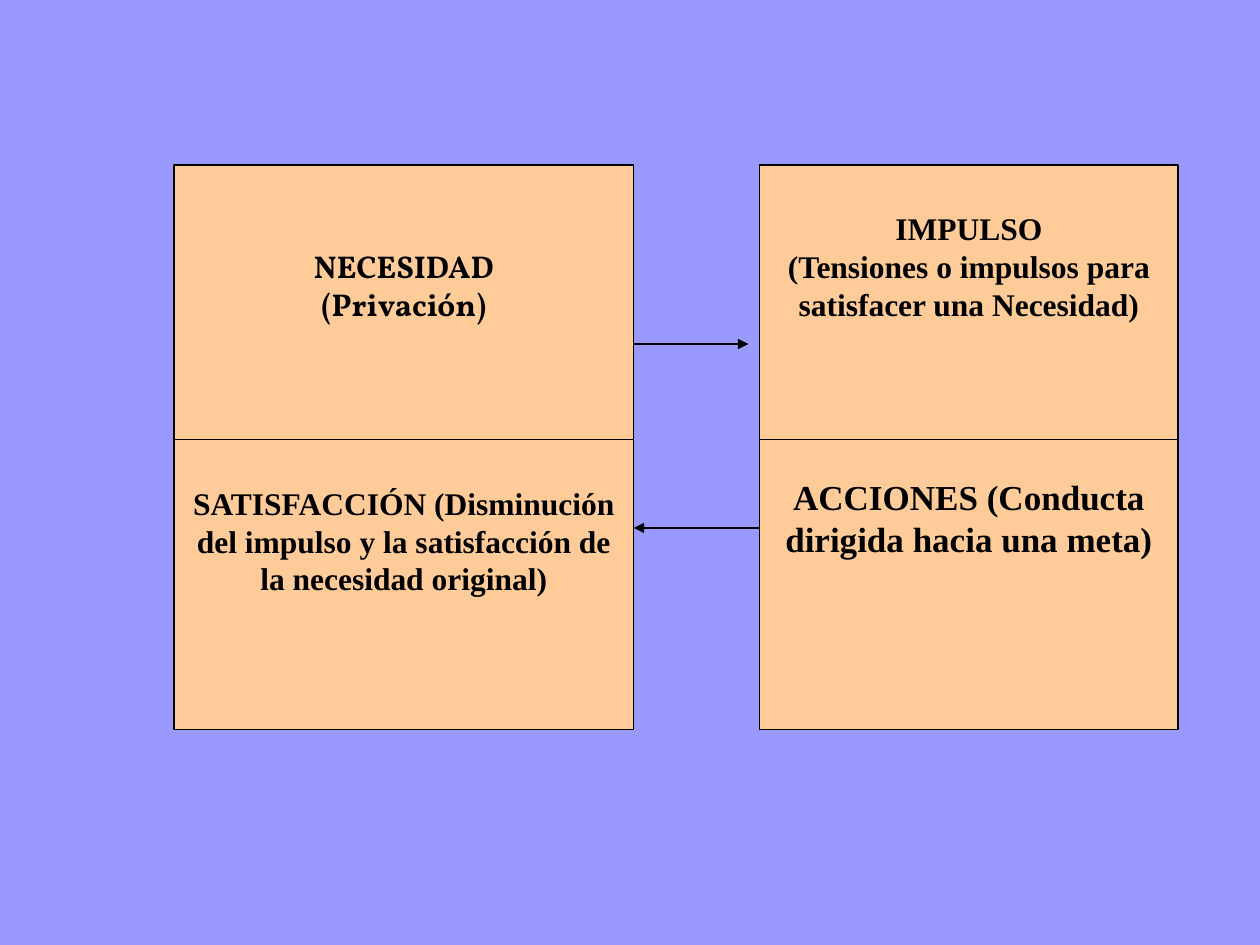
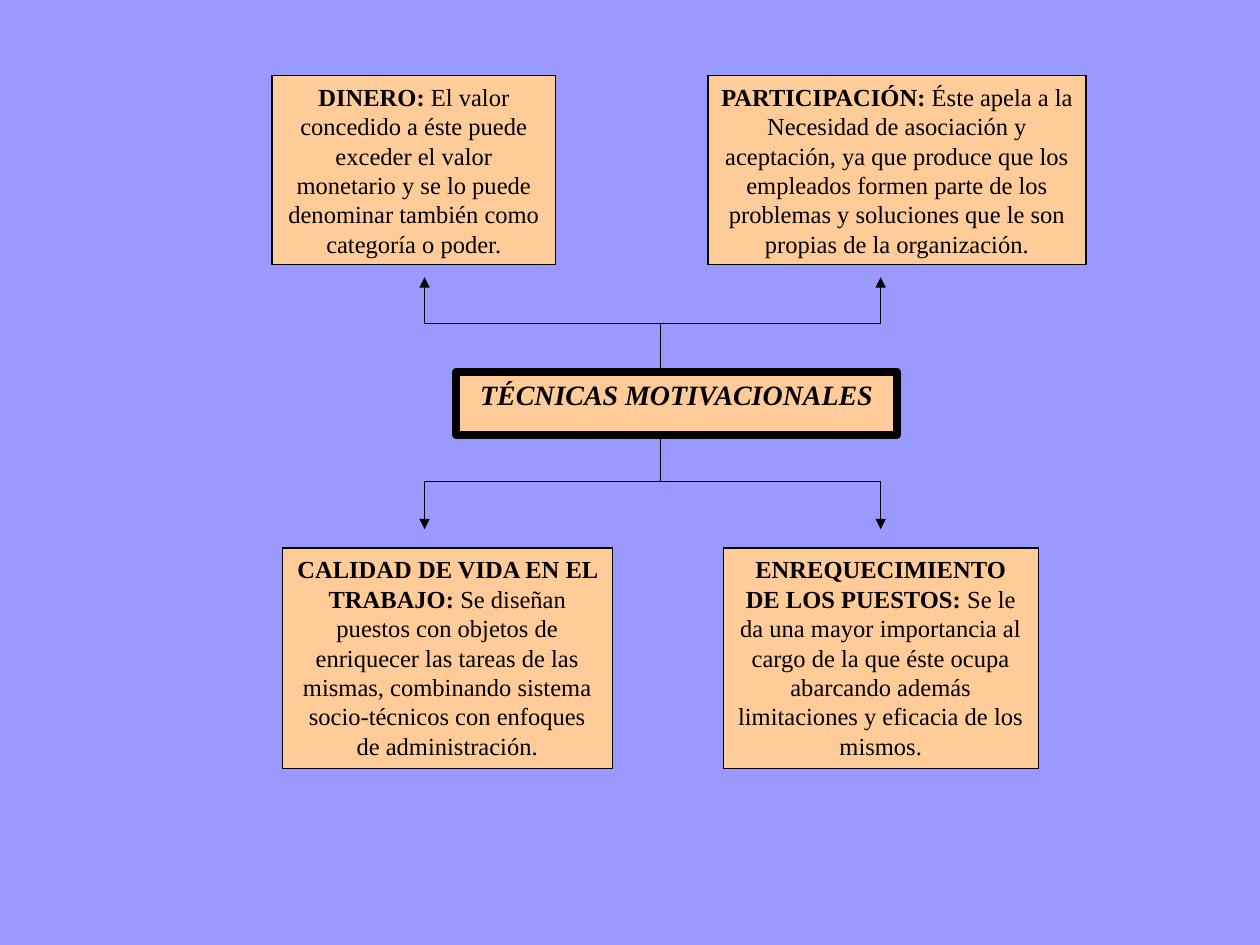
from dataclasses import dataclass

from lxml import etree
from pptx import Presentation
from pptx.dml.color import RGBColor
from pptx.enum import shapes, text
from pptx.oxml import ns
from pptx.slide import Slide
from pptx.util import Inches, Pt


@dataclass(frozen=True)
class Theme:
    background: RGBColor = RGBColor(0x99, 0x99, 0xFF)
    panel: RGBColor = RGBColor(0xFF, 0xCC, 0x99)
    ink: RGBColor = RGBColor(0, 0, 0)
    font: str = "Times New Roman"
    accent_font: str = "Vollkorn"
    small: float = 14
    heading: float = 16
    medium: float = 18
    large: float = 20
    thin: float = 0.75
    thick: float = 4.5


THEME = Theme()


@dataclass(frozen=True)
class Panel:
    """A filled box: bold lead (one paragraph per line), then a plain body."""
    left: float
    top: float
    width: float
    height: float
    lead: str
    body: str = ""
    size: float = THEME.small
    font: str = THEME.font
    italic: bool = False
    border: float = THEME.thin
    inset_top: float = 0.05


@dataclass(frozen=True)
class Line:
    start: tuple[float, float]
    end: tuple[float, float]
    arrow: bool = False


def add_span(para, wording: str, panel: Panel, bold: bool) -> None:
    span = para.add_run()
    span.text = wording
    formats = {"name": panel.font, "size": Pt(panel.size),
               "bold": bold, "italic": panel.italic}
    for name, value in formats.items():
        setattr(span.font, name, value)
    span.font.color.rgb = THEME.ink


def draw_panel(page: Slide, panel: Panel) -> None:
    box = page.shapes.add_shape(
        shapes.MSO_SHAPE.RECTANGLE, Inches(panel.left), Inches(panel.top),
        Inches(panel.width), Inches(panel.height))
    box.shadow.inherit = False
    box.fill.solid()
    box.fill.fore_color.rgb = THEME.panel
    box.line.color.rgb = THEME.ink
    box.line.width = Pt(panel.border)
    frame = box.text_frame
    formats = {"word_wrap": True, "vertical_anchor": text.MSO_ANCHOR.TOP,
               "margin_top": Inches(panel.inset_top)}
    for name, value in formats.items():
        setattr(frame, name, value)
    for index, wording in enumerate(panel.lead.split("\n")):
        para = frame.add_paragraph() if index else frame.paragraphs[0]
        para.alignment = text.PP_ALIGN.CENTER
        add_span(para, wording, panel, bold=True)
    if panel.body:
        add_span(para, " " + panel.body, panel, bold=False)


def draw_line(page: Slide, line: Line) -> None:
    points = [Inches(value) for value in (*line.start, *line.end)]
    connector = page.shapes.add_connector(shapes.MSO_CONNECTOR.STRAIGHT, *points)
    connector.line.color.rgb = THEME.ink
    connector.line.width = Pt(THEME.thin)
    if line.arrow:
        outline = connector.line._get_or_add_ln()
        etree.SubElement(outline, ns.qn("a:tailEnd"), type="triangle")
    etree.SubElement(connector._element.spPr, ns.qn("a:effectLst"))


def branch(trunk: float, arms: tuple[float, float],
           base: float, fork: float, tip: float) -> list[Line]:
    """A trunk from base to fork, a crossbar, and an arrow to tip on each arm."""
    left, right = arms
    return [Line((trunk, base), (trunk, fork)),
            Line((left, fork), (right, fork)),
            *(Line((arm, fork), (arm, tip), arrow=True) for arm in arms)]


def build_cycle(page: Slide) -> None:
    upper, lower, height = 1.31, 3.49, 2.3
    left, left_width = 1.38, 3.65
    right, right_width = 6.03, 3.32
    panels = [
        Panel(left, upper, left_width, height, "NECESIDAD\n(Privación)",
              size=THEME.medium, font=THEME.accent_font, inset_top=0.65),
        Panel(left, lower, left_width, height,
              "SATISFACCIÓN (Disminución del impulso y la satisfacción "
              "de la necesidad original)",
              size=THEME.medium, inset_top=0.35),
        Panel(right, upper, right_width, height,
              "IMPULSO\n(Tensiones o impulsos para satisfacer una Necesidad)",
              size=THEME.medium, inset_top=0.35),
        Panel(right, lower, right_width, height,
              "ACCIONES (Conducta dirigida hacia una meta)",
              size=THEME.large, inset_top=0.28),
    ]
    for panel in panels:
        draw_panel(page, panel)
    left_edge = left + left_width
    draw_line(page, Line((left_edge, 2.73), (5.94, 2.73), arrow=True))
    draw_line(page, Line((right, 4.19), (left_edge, 4.19), arrow=True))


def build_techniques(page: Slide) -> None:
    upper, upper_height = 0.6, 1.5
    lower, lower_height = 4.35, 1.75
    center = Panel(3.62, 2.95, 3.5, 0.5, "TÉCNICAS MOTIVACIONALES",
                   size=THEME.heading, italic=True, border=THEME.thick)
    panels = [
        Panel(2.16, upper, 2.25, upper_height, "DINERO:",
              "El valor concedido a éste puede exceder el valor monetario "
              "y se lo puede denominar también como categoría o poder."),
        Panel(5.62, upper, 3, upper_height, "PARTICIPACIÓN:",
              "Éste apela a la Necesidad de asociación y aceptación, ya que "
              "produce que los empleados formen parte de los problemas y "
              "soluciones que le son propias de la organización."),
        center,
        Panel(2.24, lower, 2.62, lower_height, "CALIDAD DE VIDA EN EL TRABAJO:",
              "Se diseñan puestos con objetos de enriquecer las tareas de las "
              "mismas, combinando sistema socio-técnicos con enfoques de "
              "administración."),
        Panel(5.74, lower, 2.5, lower_height, "ENREQUECIMIENTO DE LOS PUESTOS:",
              "Se le da una mayor importancia al cargo de la que éste ocupa "
              "abarcando además limitaciones y eficacia de los mismos."),
    ]
    for panel in panels:
        draw_panel(page, panel)
    trunk, arms = 5.24, (3.37, 6.99)
    bottom = center.top + center.height
    for line in (*branch(trunk, arms, center.top, fork=2.57, tip=2.2),
                 *branch(trunk, arms, bottom, fork=3.82, tip=4.2)):
        draw_line(page, line)


def main() -> None:
    deck = Presentation()
    deck.slide_width, deck.slide_height = Inches(10), Inches(7.5)
    backdrop = deck.slide_master.background.fill
    backdrop.solid()
    backdrop.fore_color.rgb = THEME.background
    blank = deck.slide_layouts.get_by_name("Blank")
    for build in (build_cycle, build_techniques):
        build(deck.slides.add_slide(blank))
    deck.save("out.pptx")


if __name__ == "__main__":
    main()
